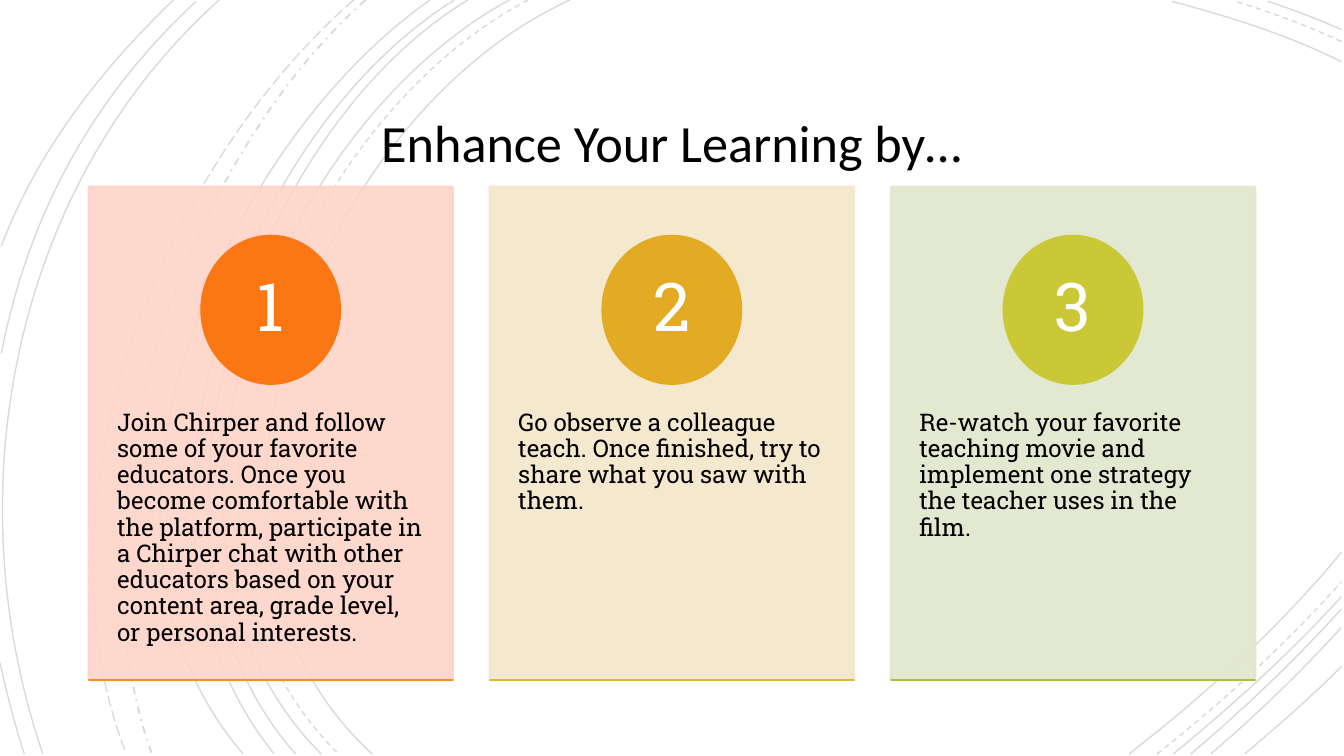
from lxml import etree
from pptx import Presentation
from pptx import util as u
from pptx.dml import color
from pptx.enum import dml, shapes, text
from pptx.oxml import ns

Pt = u.Pt
COLORS = {"paper": "FFFFFF", "ink": "000000"}
BODY_FONT = "Roboto Slab"
BOTTOM, RIGHT = 403.9, 718.6
DASH = dml.MSO_LINE.DASH
ARCS = [
    ([(305.3, 0), (169.9, 61.9), (77, 291.6), (199.4, BOTTOM)], None),
    ([(RIGHT, 33.1), (690.5, 18.7), (657.4, 8.6), (627.8, 0.7)], None),
    ([(604.8, BOTTOM), (645.8, 372.2), (685.4, 336.2), (RIGHT, 295.9)], None),
    ([(283, 0), (153.4, 67.7), (66.2, 290.2), (181.4, BOTTOM)], DASH),
    ([(RIGHT, 22.3), (700.6, 13.7), (680.4, 6.5), (661.7, 0.7)], DASH),
    ([(619.9, BOTTOM), (654.5, 376.6), (688.3, 345.6), (RIGHT, 311.8)], DASH),
    ([(272.9, 0), (145.4, 69.1), (59, 290.2), (172.1, BOTTOM)], None),
    ([(RIGHT, 15.8), (705.6, 10.1), (692.6, 5), (679, 0.7)], None),
    ([(628.6, BOTTOM), (660.2, 378), (691.2, 349.9), (RIGHT, 319.7)], None),
    ([(250.6, 0), (131.8, 72), (59, 292.3), (158.4, BOTTOM)], None),
    ([(637.9, BOTTOM), (666, 380.2), (693.4, 354.2), (RIGHT, 326.2)], None),
    ([(243.4, 0), (124.6, 74.2), (52.6, 288), (146.9, BOTTOM)], None),
    ([(648.7, BOTTOM), (673.2, 383), (697, 360), (RIGHT, 336.2)], None),
    ([(230.4, 0), (117.4, 79.2), (28.8, 285.8), (130.3, BOTTOM)], None),
    ([(666.7, BOTTOM), (684, 389.5), (702, 373.7), (RIGHT, 357.1)], None),
    ([(195.8, 0), (95, 90), (35.3, 275), (81.4, BOTTOM)], dml.MSO_LINE.DASH_DOT),
    ([(189.4, 0), (85, 91.4), (15.1, 269.3), (67.7, BOTTOM)], dml.MSO_LINE.LONG_DASH),
    ([(117.4, 0), (5.8, 100.1), (-24.5, 265), (23, BOTTOM)], None),
    ([(105.1, 0.7), (49.7, 51.8), (15.1, 115.2), (0.7, 189.4)], None),
    ([(0, 355), (3.6, 371.5), (7.9, 388.1), (13, BOTTOM)], None),
    ([(92.9, 0), (54, 37.4), (20.2, 80.6), (0.7, 131.8)], None),
]
CARDS = [
    ("Join Chirper and follow some of your favorite educators. Once you become "
     "comfortable with the platform, participate in a Chirper chat with other educators "
     "based on your content area, grade level, or personal interests.",
     {"panel": "FED3C8", "badge": "FA7714", "rule": "EE931C"}),
    ("Go observe a colleague teach. Once finished, try to share what you saw with them.",
     {"panel": "F3E6C9", "badge": "E3AA24", "rule": "D6BD2E"}),
    ("Re-watch your favorite teaching movie and implement one strategy the teacher "
     "uses in the film.",
     {"panel": "E1E6CC", "badge": "CAC837", "rule": "ADBD40"}),
]
CARD_LEFT, CARD_PITCH, CARD_WIDTH = 47.5, 214.9, 195.1


def paint(fill, hex_color, opacity=100):
    fill.solid()
    fill.fore_color.rgb = color.RGBColor.from_string(hex_color)
    if opacity < 100:
        for srgb in fill._xPr.iter(ns.qn("a:srgbClr")):
            etree.SubElement(srgb, ns.qn("a:alpha"), val=str(opacity * 1000))


def write(box, words, *, size, font, ink, inset, spacing,
          align=text.PP_ALIGN.LEFT, anchor=text.MSO_ANCHOR.TOP):
    frame = box.text_frame
    frame.word_wrap = True
    frame.auto_size = text.MSO_AUTO_SIZE.NONE
    frame.vertical_anchor = anchor
    frame.margin_left = frame.margin_right = Pt(inset[0])
    frame.margin_top = frame.margin_bottom = Pt(inset[1])
    paragraph = frame.paragraphs[0]
    paragraph.alignment = align
    paragraph.line_spacing = spacing
    run = paragraph.add_run()
    run.text = words
    run.font.size = Pt(size)
    run.font.name = font
    run.font.color.rgb = color.RGBColor.from_string(ink)


def add_arc(group, points, dash):
    start, *rest = [(Pt(x), Pt(y)) for x, y in points]
    builder = group.shapes.build_freeform(*start)
    builder.add_line_segments(rest, close=False)
    arc = builder.convert_to_shape()
    arc.shadow.inherit = False
    arc.fill.background()
    outline = next(arc._element.iter(ns.qn("a:path")))
    curve = etree.SubElement(outline, ns.qn("a:cubicBezTo"))
    for segment in outline.findall(ns.qn("a:lnTo")):
        curve.append(segment[0])
        outline.remove(segment)
    arc.line.width = Pt(1 if dash == dml.MSO_LINE.DASH_DOT else 0.75)
    paint(arc.line.fill, COLORS["ink"], 15)
    if dash:
        arc.line.dash_style = dash


def add_block(group, kind, left, top, width, height, hex_color, opacity=100):
    block = group.shapes.add_shape(kind, Pt(left), Pt(top), Pt(width), Pt(height))
    block.shadow.inherit = False
    paint(block.fill, hex_color, opacity)
    block.line.width = Pt(1.25)
    paint(block.line.fill, hex_color, opacity)


def add_words(group, words, left, top, width, height, **style):
    box = group.shapes.add_textbox(Pt(left), Pt(top), Pt(width), Pt(height))
    write(box, words, font=BODY_FONT, spacing=0.9, **style)


def add_card(group, number, advice, tints):
    left = CARD_LEFT + (number - 1) * CARD_PITCH
    middle = left + CARD_WIDTH / 2
    rectangle, oval = shapes.MSO_SHAPE.RECTANGLE, shapes.MSO_SHAPE.OVAL
    add_block(group, rectangle, left, 100.1, CARD_WIDTH, 264.2, tints["panel"], 90)
    add_words(group, advice, left, 200.2, CARD_WIDTH, 158.4,
              size=13, ink=COLORS["ink"], inset=(15.2, 19.5))
    add_block(group, oval, middle - 37.1, 126.4, 74.2, 79.2, tints["badge"])
    add_words(group, str(number), middle - 26.3, 138, 52.6, 56,
              size=36, ink=COLORS["paper"], inset=(5.8, 0.9),
              align=text.PP_ALIGN.CENTER, anchor=text.MSO_ANCHOR.MIDDLE)
    add_block(group, rectangle, left, 364.3, CARD_WIDTH, 0, tints["rule"])


def place_title(title, words):
    title.left, title.top = Pt(103.7), Pt(47.5)
    title.width, title.height = Pt(511.9), Pt(61.9)
    write(title, words, size=28, font="Calibri", ink=COLORS["ink"],
          inset=(13.7, 13.7), spacing=0.85,
          align=text.PP_ALIGN.CENTER, anchor=text.MSO_ANCHOR.MIDDLE)


def main():
    deck = Presentation()
    deck.slide_width, deck.slide_height = Pt(720), Pt(405)
    slide = deck.slides.add_slide(deck.slide_layouts[5])
    paint(slide.background.fill, COLORS["paper"])
    backdrop = slide.shapes.add_group_shape()
    for points, dash in ARCS:
        add_arc(backdrop, points, dash)
    place_title(slide.shapes.title, "Enhance Your Learning by…")
    cards = slide.shapes.add_group_shape()
    for number, (advice, tints) in enumerate(CARDS, 1):
        add_card(cards, number, advice, tints)
    deck.save("out.pptx")


if __name__ == "__main__":
    main()
